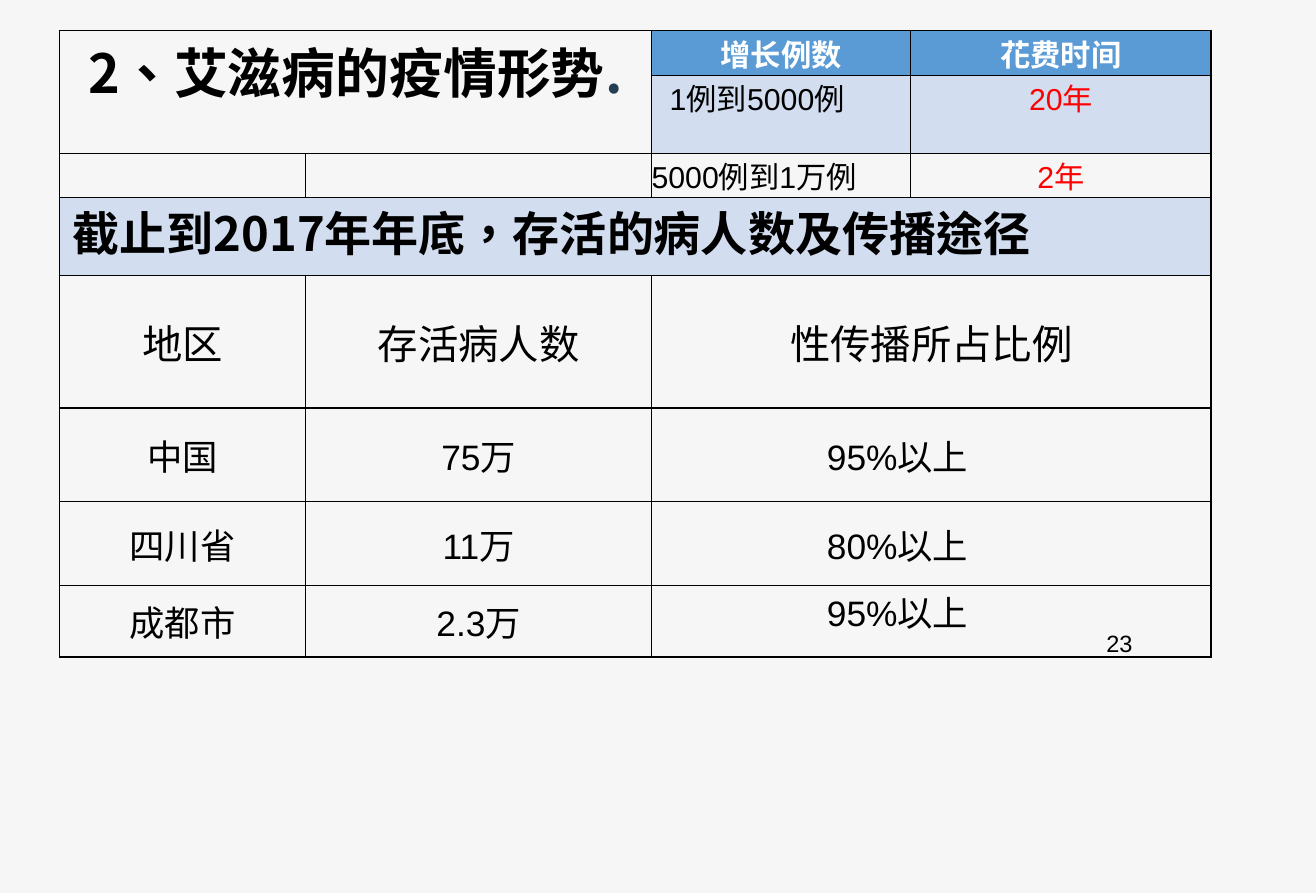
from itertools import groupby

from lxml import etree
from pptx import Presentation
from pptx.dml.color import RGBColor
from pptx.enum.text import MSO_ANCHOR as ANCHOR, PP_ALIGN as ALIGN
from pptx.oxml.ns import qn
from pptx.util import Cm, Pt

BACKGROUND = RGBColor(0xF6, 0xF6, 0xF6)
BLACK = RGBColor(0, 0, 0)
WHITE = RGBColor(0xFF, 0xFF, 0xFF)
RED = RGBColor(0xFF, 0, 0)
NAVY = RGBColor(0x24, 0x3E, 0x55)
BLUE = RGBColor(0x5A, 0x9B, 0xD5)
PALE_BLUE = RGBColor(0xD2, 0xDD, 0xEF)

LATIN, CJK = "Arial", "Noto Sans CJK SC"
THIN, THICK = Pt(0.75), Pt(1.25)
COLS = [Cm(w) for w in (5.16, 7.26, 5.44, 6.3)]
ROWS = [Cm(h) for h in (0.94, 1.17, 0.89, 1.64, 2.79, 1.96, 1.76, 1.47)]

GROWTH = [("1例到5000例", "20年"), ("5000例到1万例", "2年")]
REGIONS = [("中国", "75万", "95%以上"),
           ("四川省", "11万", "80%以上"),
           ("成都市", "2.3万", "95%以上")]


def add_run(p, text, size, color=BLACK, bold=False, font=CJK):
    r = p.add_run()
    r.text = text
    r.font.size, r.font.bold, r.font.name = Pt(size), bold, font
    r.font.color.rgb = color
    rPr = r._r.get_or_add_rPr()
    if font == CJK:
        rPr.set("lang", "zh-TW")  # centred punctuation
    etree.SubElement(rPr, qn("a:ea")).set("typeface", font)


def add_mixed(p, text, size, color=BLACK):
    """Latin characters in one font, Chinese ones in the other."""
    for is_latin, chars in groupby(text, str.isascii):
        add_run(p, "".join(chars), size, color, font=LATIN if is_latin else CJK)


def format_cell(cell, anchor=ANCHOR.TOP, align=ALIGN.CENTER, fill=None, **margins):
    """Style a cell and return its first paragraph."""
    cell.vertical_anchor = anchor
    if fill is not None:
        cell.fill.solid()
        cell.fill.fore_color.rgb = fill
    p = cell.text_frame.paragraphs[0]
    p.alignment = align
    set_margins(p, **margins)
    return p


def set_margins(p, **margins):
    for name, length in margins.items():
        p._p.get_or_add_pPr().set(name, str(int(length)))


def set_borders(cell, **widths):
    tcPr = cell._tc.get_or_add_tcPr()
    for i, (side, width) in enumerate(widths.items()):
        ln = etree.Element(qn(f"a:ln{side}"), w=str(int(width)))
        fill = etree.SubElement(ln, qn("a:solidFill"))
        etree.SubElement(fill, qn("a:srgbClr"), val=str(BLACK))
        tcPr.insert(i, ln)


def add_grid(slide, left, top):
    """Empty bordered table with its merged cells."""
    frame = slide.shapes.add_table(len(ROWS), len(COLS), left, top,
                                   sum(COLS), sum(ROWS))
    table = frame.table
    table.first_row = table.horz_banding = False
    for col, width in zip(table.columns, COLS):
        col.width = width
    for row, height in zip(table.rows, ROWS):
        row.height = height

    table.cell(0, 0).merge(table.cell(1, 1))
    table.cell(3, 0).merge(table.cell(3, 3))
    for row in range(4, len(ROWS)):
        table.cell(row, 2).merge(table.cell(row, 3))

    for row in range(len(ROWS)):
        for col in range(len(COLS)):
            cell = table.cell(row, col)
            cell.margin_left = cell.margin_right = 0
            cell.margin_top = cell.margin_bottom = 0
            cell.fill.background()
            if cell.is_spanned:
                continue
            last = col + (cell.span_width if cell.is_merge_origin else 1)
            split = row in (2, 4, 5, 6, 7)
            set_borders(cell,
                        L=THICK if split and col == 1 else THIN,
                        R=THICK if last == 4 or split and col == 0 else THIN,
                        T=THICK if row == 5 else THIN,
                        B=THICK if row == 4 else THIN)
    return table


def fill_heading(table):
    p = format_cell(table.cell(0, 0))
    add_run(p, "2、艾滋病的疫情形势", 32, bold=True)
    add_run(p, ".", 32, NAVY, True)


def fill_growth(table, top, left):
    """Case growth against time taken."""
    for col, text in enumerate(("增长例数", "花费时间"), left):
        p = format_cell(table.cell(top, col), ANCHOR.BOTTOM, fill=BLUE)
        add_run(p, text, 18, WHITE, True)
    styles = [(PALE_BLUE, Cm(0.38)), (None, 0)]
    for row, ((cases, years), (fill, indent)) in enumerate(zip(GROWTH, styles), top + 1):
        p = format_cell(table.cell(row, left), align=ALIGN.LEFT, fill=fill,
                        marL=0, indent=indent)
        add_mixed(p, cases, 18)
        p = format_cell(table.cell(row, left + 1), fill=fill)
        add_mixed(p, years, 18, RED)


def fill_regions(table, top):
    """Surviving patients and transmission share by region."""
    p = format_cell(table.cell(top, 0), align=ALIGN.LEFT, fill=PALE_BLUE,
                    marL=0, indent=Cm(0.28))
    add_run(p, "截止到2017年年底，存活的病人数及传播途径", 28, bold=True)
    for col, text in enumerate(("地区", "存活病人数", "性传播所占比例")):
        add_run(format_cell(table.cell(top + 1, col), ANCHOR.MIDDLE), text, 24)
    for row, (region, patients, share) in enumerate(REGIONS, top + 2):
        for col, text in enumerate((region, patients)):
            add_mixed(format_cell(table.cell(row, col), ANCHOR.MIDDLE), text, 21)
        p = format_cell(table.cell(row, 2), ANCHOR.MIDDLE, ALIGN.LEFT,
                        marL=Cm(3.68), indent=0)
        add_mixed(p, share, 21)

    # Page number in the last cell
    cell = table.cell(top + 1 + len(REGIONS), 2)
    cell.vertical_anchor = ANCHOR.BOTTOM
    p = cell.text_frame.add_paragraph()
    p.alignment, p.line_spacing = ALIGN.RIGHT, 0.77
    set_margins(p, marR=Cm(1.65))
    add_mixed(p, "23", 14)


def main():
    prs = Presentation()
    prs.slide_width, prs.slide_height = Cm(27.61), Cm(18.74)
    s = prs.slides.add_slide(prs.slide_layouts[6])
    s.background.fill.solid()
    s.background.fill.fore_color.rgb = BACKGROUND

    table = add_grid(s, Cm(1.25), Cm(0.64))
    fill_heading(table)
    fill_growth(table, top=0, left=2)
    fill_regions(table, top=3)
    prs.save("out.pptx")


if __name__ == "__main__":
    main()
